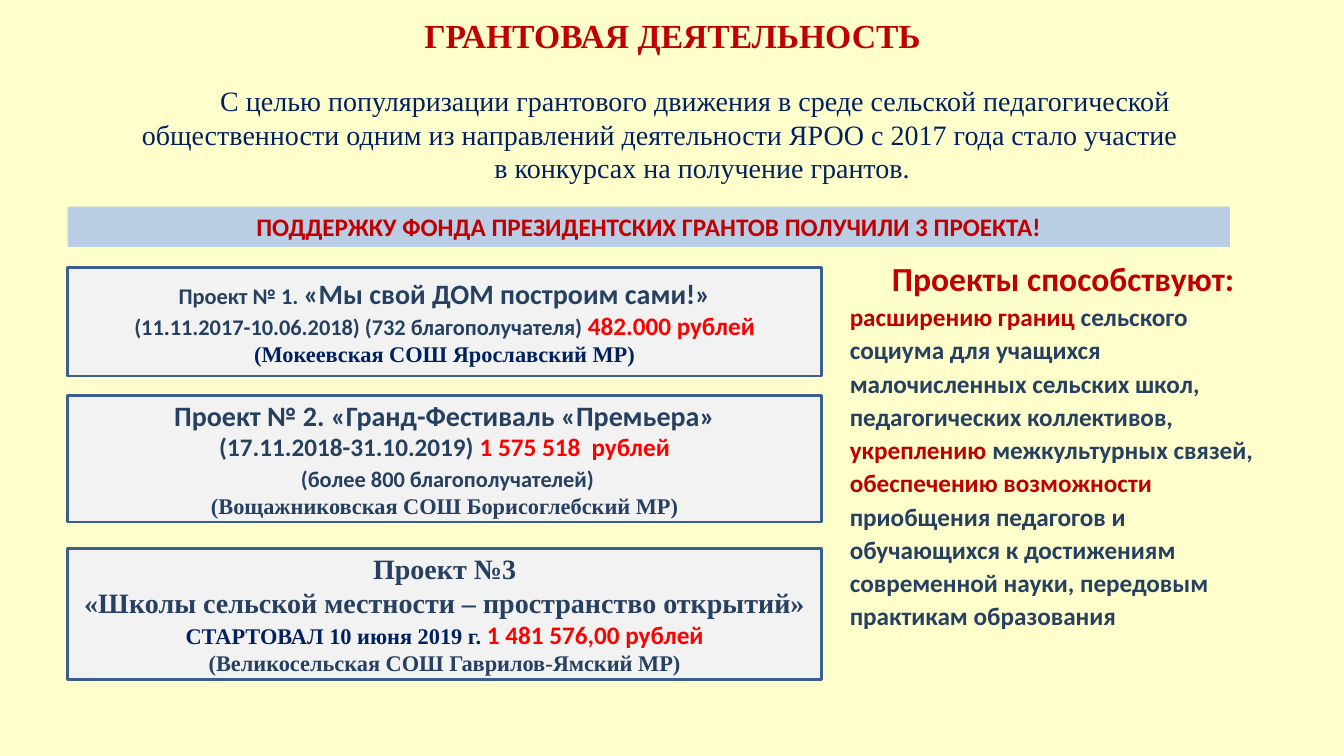
from pptx import Presentation
from pptx.dml.color import RGBColor
from pptx.enum.shapes import MSO_SHAPE
from pptx.enum.text import MSO_ANCHOR, MSO_AUTO_SIZE, PP_ALIGN
from pptx.util import Inches, Pt

CREAM = RGBColor(0xFF, 0xFF, 0xCC)
CRIMSON = RGBColor(0xC0, 0x00, 0x00)
RED = RGBColor(0xFF, 0x00, 0x00)
NAVY = RGBColor(0x00, 0x20, 0x60)
SLATE = RGBColor(0x25, 0x40, 0x61)
CARD_FILL = RGBColor(0xF2, 0xF2, 0xF2)
CARD_BORDER = RGBColor(0x3A, 0x5F, 0x8C)
BANNER_FILL = RGBColor(0xB9, 0xCD, 0xE5)
SANS, SERIF = "Calibri", "Times New Roman"


def write(frame, lines, align=PP_ALIGN.CENTER, bold=True):
    """Fill a frame with lines, each a list of (text, size, colour, font) runs."""
    frame.word_wrap = True
    for number, line in enumerate(lines):
        paragraph = frame.add_paragraph() if number else frame.paragraphs[0]
        paragraph.alignment = align
        for text, size, colour, font in line:
            run = paragraph.add_run()
            run.text = text
            run.font.size = Pt(size)
            run.font.color.rgb = colour
            run.font.name = font
            run.font.bold = bold


def add_panel(left, top, width, height, fill):
    panel = slide.shapes.add_shape(MSO_SHAPE.RECTANGLE, Inches(left), Inches(top),
                                   Inches(width), Inches(height))
    panel.shadow.inherit = False
    panel.fill.solid()
    panel.fill.fore_color.rgb = fill
    panel.line.fill.background()
    return panel


prs = Presentation()
prs.slide_width, prs.slide_height = Inches(13.33), Inches(7.5)
slide = prs.slides.add_slide(prs.slide_layouts[5])
slide.background.fill.solid()
slide.background.fill.fore_color.rgb = CREAM

# Title
title = slide.shapes.title
title.left, title.top = Inches(1.42), Inches(0.1)
title.width, title.height = Inches(10.5), Inches(0.49)
title.text_frame.vertical_anchor = MSO_ANCHOR.MIDDLE
write(title.text_frame, [[("ГРАНТОВАЯ ДЕЯТЕЛЬНОСТЬ", 24, CRIMSON, SERIF)]])

# Introduction: indented first line, closing line set further right
intro = slide.shapes.add_textbox(Inches(1.28), Inches(0.78), Inches(10.53), Inches(1.31)).text_frame
write(intro, [
    [("С целью популяризации грантового движения в среде сельской педагогической "
      "общественности одним из направлений деятельности ЯРОО с 2017 года стало участие",
      20, NAVY, SERIF)],
    [("в конкурсах на получение грантов.", 20, NAVY, SERIF)],
], bold=False)
opening, closing = intro.paragraphs
opening.space_before = Pt(4)
opening._p.get_or_add_pPr().set("indent", str(Inches(0.7)))
closing._p.get_or_add_pPr().set("marL", str(Inches(0.84)))

# Project cards
projects = [
    (2.65, 1.08, [
        [("Проект № 1. ", 16, SLATE, SANS), ("«Мы свой ДОМ построим сами!»", 20, SLATE, SANS)],
        [("(11.11.2017-10.06.2018) (732 благополучателя) ", 16, SLATE, SANS),
         ("482.000 рублей", 18, RED, SANS)],
        [("(Мокеевская СОШ Ярославский МР)", 16, NAVY, SERIF)],
    ]),
    (3.92, 1.26, [
        [("Проект № 2. «Гранд-Фестиваль «Премьера»", 20, SLATE, SANS)],
        [("(17.11.2018-31.10.2019) ", 18, SLATE, SANS), ("1 575 518  рублей", 18, RED, SANS)],
        [(" ", 18, RED, SANS), ("(более 800 благополучателей)", 16, SLATE, SANS)],
        [("(Вощажниковская СОШ Борисоглебский МР)", 16, SLATE, SERIF)],
    ]),
    (5.44, 1.3, [
        [("Проект №3", 20, SLATE, SERIF)],
        [("«Школы сельской местности – пространство открытий»", 20, SLATE, SERIF)],
        [("СТАРТОВАЛ 10 июня 2019 г. ", 16, NAVY, SERIF), ("1 481 576,00 рублей", 18, RED, SANS)],
        [("(Великосельская СОШ Гаврилов-Ямский МР)", 16, SLATE, SERIF)],
    ]),
]
for top, height, lines in projects:
    card = add_panel(0.67, top, 7.48, height, CARD_FILL)
    card.line.color.rgb = CARD_BORDER
    card.line.width = Pt(2)
    card.text_frame.vertical_anchor = MSO_ANCHOR.MIDDLE
    write(card.text_frame, lines)

# Benefits column
benefits = slide.shapes.add_textbox(Inches(8.33), Inches(2.47), Inches(4.43), Inches(3.88)).text_frame
goals = [
    ("расширению границ ", "сельского социума для учащихся малочисленных сельских школ, "
                           "педагогических коллективов,"),
    ("укреплению ", "межкультурных связей,"),
    ("обеспечению возможности ", "приобщения педагогов и обучающихся к достижениям "
                                 "современной науки, передовым практикам образования"),
]
write(benefits, [[("Проекты способствуют:", 24, CRIMSON, SANS)]]
      + [[(verb, 18, CRIMSON, SANS), (goal, 18, SLATE, SANS)] for verb, goal in goals],
      PP_ALIGN.LEFT)
benefits.paragraphs[0].alignment = PP_ALIGN.CENTER
for paragraph in benefits.paragraphs:
    paragraph.line_spacing = 1.1
benefits.auto_size = MSO_AUTO_SIZE.SHAPE_TO_FIT_TEXT

# Banner
banner = add_panel(0.67, 2.05, 11.53, 0.4, BANNER_FILL).text_frame
banner.vertical_anchor = MSO_ANCHOR.TOP
banner.auto_size = MSO_AUTO_SIZE.SHAPE_TO_FIT_TEXT
write(banner, [[("ПОДДЕРЖКУ ФОНДА ПРЕЗИДЕНТСКИХ ГРАНТОВ ПОЛУЧИЛИ 3 ПРОЕКТА!", 18, CRIMSON, SANS)]])

prs.save("out.pptx")
